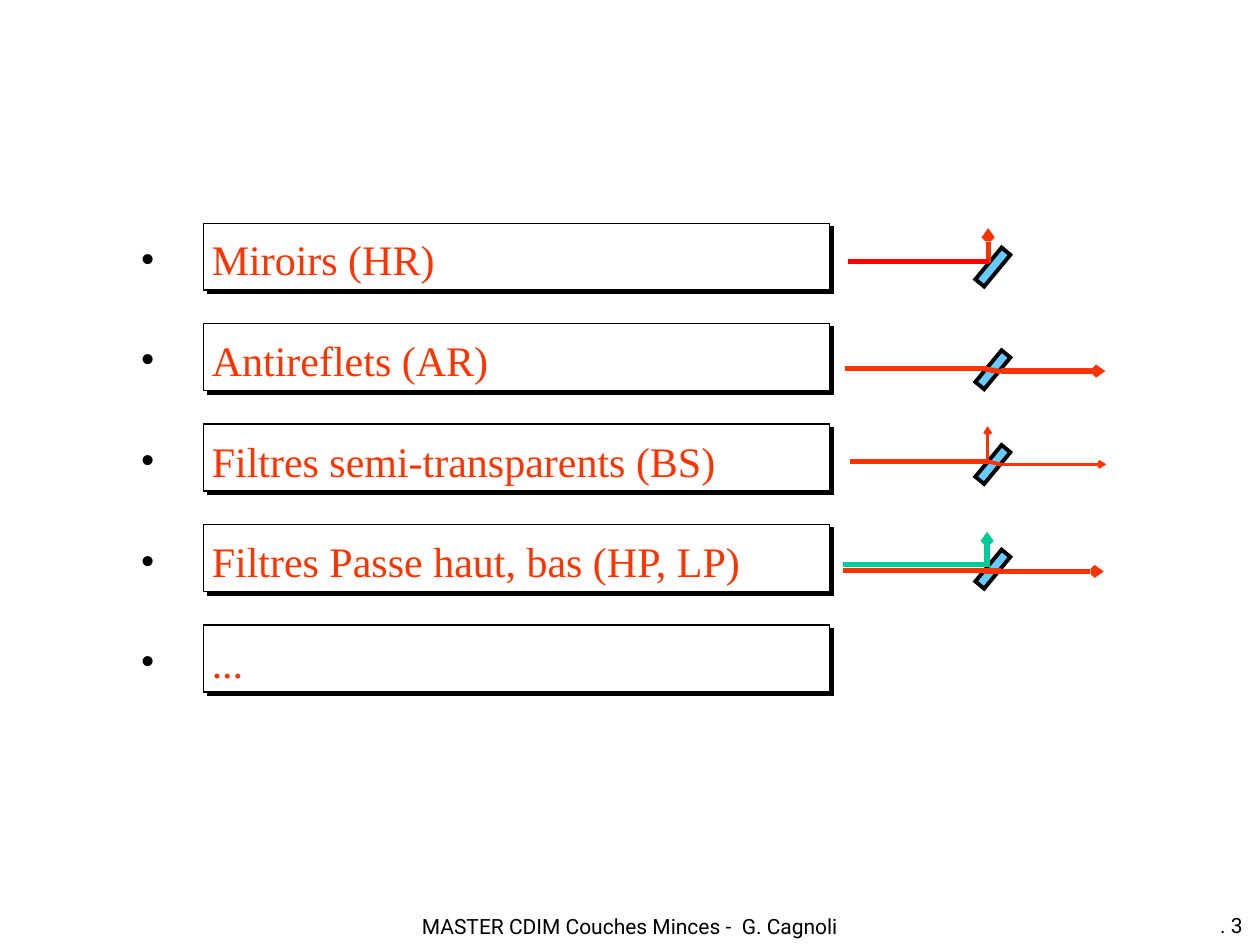
from lxml.etree import SubElement
from pptx import Presentation
from pptx.dml.color import RGBColor
from pptx.enum.shapes import MSO_CONNECTOR, MSO_SHAPE
from pptx.enum.text import PP_ALIGN
from pptx.oxml.ns import qn
from pptx.util import Cm, Pt

BLACK = RGBColor(0x00, 0x00, 0x00)
WHITE = RGBColor(0xFF, 0xFF, 0xFF)
ORANGE = RGBColor(0xFF, 0x33, 0x00)
RED = RGBColor(0xFF, 0x00, 0x00)
GREEN = RGBColor(0x00, 0xCC, 0x99)
GLASS = RGBColor(0x66, 0xCC, 0xFF)

COATINGS = [
    "Miroirs (HR)",
    "Antireflets (AR)",
    "Filtres semi-transparents (BS)",
    "Filtres Passe haut, bas (HP, LP)",
    "...",
]
FRAME_TOP, FRAME_PITCH = 4.5, 2.025
PLATE_TOPS = [4.97, 7.04, 8.95, 11.06]

BEAMS = [
    (19.92, 5.31, 19.92, 4.6, ORANGE, 3, True),
    (17.09, 5.27, 19.94, 5.27, RED, 3, False),
    (19.86, 7.44, 20.17, 7.49, ORANGE, 3, False),
    (20.17, 7.48, 22.28, 7.48, ORANGE, 3, True),
    (17.04, 7.43, 19.89, 7.43, ORANGE, 3, False),
    (19.91, 9.3, 20.19, 9.37, ORANGE, 2.25, False),
    (20.19, 9.36, 22.3, 9.36, ORANGE, 1.5, True),
    (19.91, 9.3, 19.91, 8.59, ORANGE, 1.5, True),
    (17.13, 9.31, 19.91, 9.31, ORANGE, 3, False),
    (19.84, 11.51, 20.17, 11.51, ORANGE, 3, False),
    (20.14, 11.52, 22.25, 11.52, ORANGE, 3, True),
    (17, 11.5, 19.86, 11.5, ORANGE, 3, False),
    (19.9, 11.43, 19.9, 10.72, GREEN, 3, True),
    (16.99, 11.38, 19.84, 11.38, GREEN, 3, False),
]


def add_run(p, text, font, size, color):
    r = p.add_run()
    r.text = text
    r.font.name = font
    r.font.size = Pt(size)
    r.font.color.rgb = color


def add_textbox(s, left, top, width, height):
    tf = s.shapes.add_textbox(Cm(left), Cm(top), Cm(width), Cm(height)).text_frame
    tf.word_wrap = True
    return tf


def add_footer(s, text, left, top, width, align):
    p = add_textbox(s, left, top, width, 0.76).paragraphs[0]
    p.alignment = align
    add_run(p, text, "Roboto", 12, BLACK)


def add_rect(s, left, top, width, height, fill, line_width):
    sp = s.shapes.add_shape(
        MSO_SHAPE.RECTANGLE, Cm(left), Cm(top), Cm(width), Cm(height))
    sp.shadow.inherit = False
    sp.fill.solid()
    sp.fill.fore_color.rgb = fill
    sp.line.color.rgb = BLACK
    sp.line.width = Pt(line_width)
    SubElement(sp.line._get_or_add_ln(), qn("a:miter"), lim="800000")
    return sp


def add_frame(s, top):
    sp = add_rect(s, 4.11, top, 12.62, 1.35, WHITE, 0.75)
    effects = sp._element.spPr.find(qn("a:effectLst"))
    shadow = SubElement(effects, qn("a:outerShdw"), dist=str(Pt(2.8)),
                        dir="2700000", algn="ctr", rotWithShape="0")
    SubElement(shadow, qn("a:srgbClr"), val=str(BLACK))


def add_plate(s, top):
    sp = add_rect(s, 19.9, top, 0.23, 0.83, GLASS, 2.25)
    sp.rotation = 39.6


def add_beam(s, x1, y1, x2, y2, color, width, arrow):
    line = s.shapes.add_connector(
        MSO_CONNECTOR.STRAIGHT, Cm(x1), Cm(y1), Cm(x2), Cm(y2))
    line.line.color.rgb = color
    line.line.width = Pt(width)
    if arrow:
        SubElement(line.line._get_or_add_ln(), qn("a:tailEnd"),
                   type="arrow", w="sm", len="sm")
    SubElement(line._element.spPr, qn("a:effectLst"))


def add_bullet(p):
    pPr = p._p.get_or_add_pPr()
    pPr.set("marL", str(Cm(2.11)))
    pPr.set("indent", str(Cm(-1.44)))
    color = SubElement(pPr, qn("a:buClr"))
    SubElement(color, qn("a:srgbClr"), val=str(BLACK))
    SubElement(pPr, qn("a:buFont"), typeface="Times New Roman")
    SubElement(pPr, qn("a:buChar"), char="•")


def add_coating_list(s):
    tf = add_textbox(s, 1.91, 4.59, 22.02, 9.3)
    for i, name in enumerate(COATINGS):
        p = tf.add_paragraph() if i else tf.paragraphs[0]
        add_bullet(p)
        if i:
            p.space_before = Pt(28.75)
        add_run(p, name, "Times New Roman", 24, ORANGE)


def main():
    prs = Presentation()
    prs.slide_width = Cm(25.4)
    prs.slide_height = Cm(19.05)
    s = prs.slides.add_slide(prs.slide_layouts[6])
    add_footer(s, "MASTER CDIM Couches Minces -  G. Cagnoli",
               6.82, 18.29, 11.76, PP_ALIGN.CENTER)
    add_footer(s, ". 3", 23.7, 18.27, 1.6, PP_ALIGN.RIGHT)
    for i in range(len(COATINGS)):
        add_frame(s, FRAME_TOP + i * FRAME_PITCH)
    add_coating_list(s)
    for top in PLATE_TOPS:
        add_plate(s, top)
    for beam in BEAMS:
        add_beam(s, *beam)
    prs.save("out.pptx")


if __name__ == "__main__":
    main()
